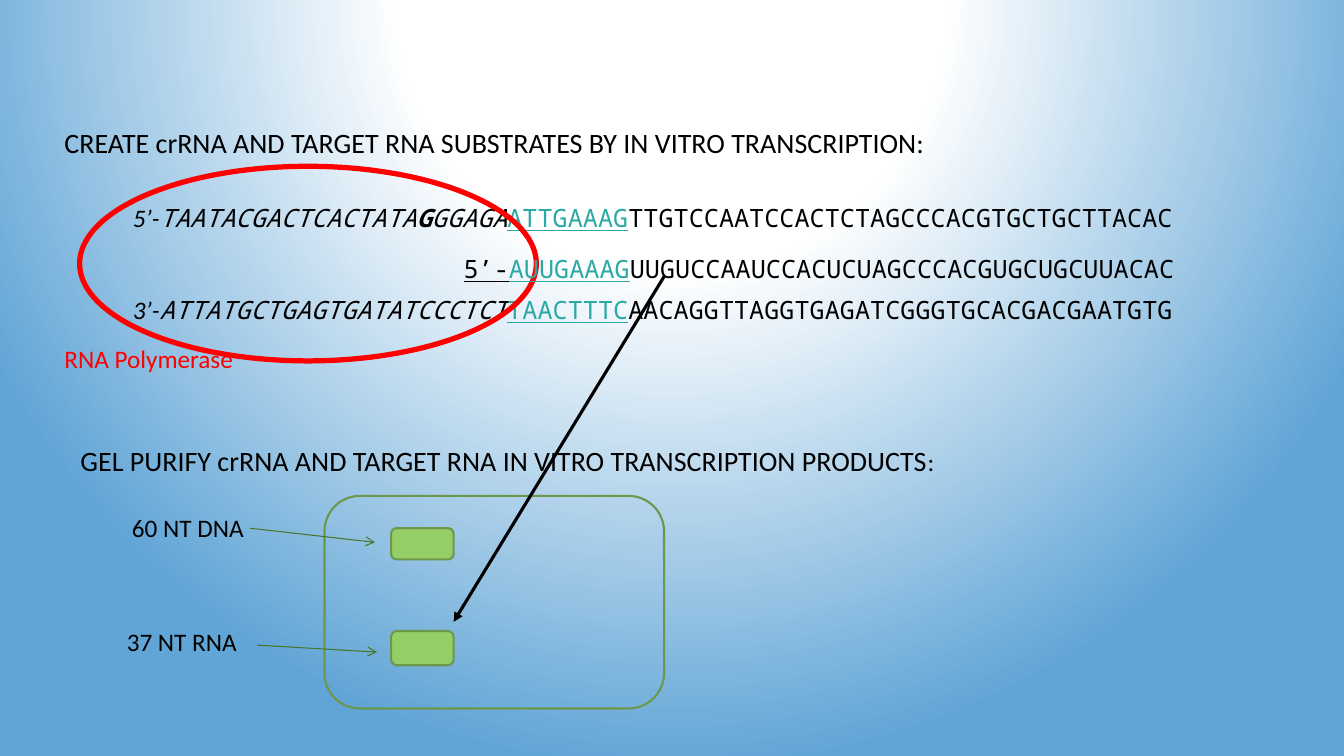
from dataclasses import dataclass

from lxml import etree
from pptx import Presentation
from pptx.dml.color import RGBColor
from pptx.enum import shapes, text
from pptx.oxml.ns import qn
from pptx.util import Pt


@dataclass(frozen=True)
class Theme:
    black: str = "000000"
    red: str = "FF0000"
    teal: str = "2BA9A5"
    band: str = "94CE67"
    gel: str = "6D984C"
    pointer: str = "487526"
    white: str = "FFFFFF"
    sky: str = "61A5D6"
    heading: int = 20
    body: int = 18
    sans: str = "Calibri"
    mono: str = "Noto Sans Mono"


THEME = Theme()
ITALIC = {"italic": True}
PREFIX = {"italic": True, "name": THEME.sans}
REPEAT = {"underline": True, "color": THEME.teal}


def style(font, color=None, size=None, **attributes):
    if color:
        font.color.rgb = RGBColor.from_string(color)
    if size:
        font.size = Pt(size)
    for name, value in attributes.items():
        setattr(font, name, value)


def add_background(slide):
    """Fill the slide with a radial gradient centred above its top edge."""
    slide.background.fill.gradient()
    gradient = slide.element.find(".//" + qn("a:gradFill"))
    for child in list(gradient):
        gradient.remove(child)
    stops = etree.SubElement(gradient, qn("a:gsLst"))
    for percent, color in ((0, THEME.white), (35, THEME.white), (100, THEME.sky)):
        stop = etree.SubElement(stops, qn("a:gs"), pos=str(percent * 1000))
        etree.SubElement(stop, qn("a:srgbClr"), val=color)
    circle = etree.SubElement(gradient, qn("a:path"), path="circle")
    etree.SubElement(circle, qn("a:fillToRect"), l="50000", t="-80000", r="50000", b="180000")


def add_text(slide, bounds, paragraphs, wrap=True, gap=0, **font):
    """Add paragraphs, each a list of (words, run style) pairs, gap points apart."""
    frame = slide.shapes.add_textbox(*map(Pt, bounds)).text_frame
    frame.word_wrap = wrap
    frame.auto_size = text.MSO_AUTO_SIZE.SHAPE_TO_FIT_TEXT
    defaults = {"name": THEME.sans, "size": THEME.body, "color": THEME.black}
    for index, runs in enumerate(paragraphs):
        paragraph = frame.add_paragraph() if index else frame.paragraphs[0]
        if index:
            paragraph.space_before = Pt(gap)
        style(paragraph.font, **{**defaults, **font})
        for words, run_style in runs:
            run = paragraph.add_run()
            run.text = words
            style(run.font, **run_style)


def add_outline(slide, kind, bounds, color, width, fill=None):
    shape = slide.shapes.add_shape(kind, *map(Pt, bounds))
    shape.shadow.inherit = False
    if fill:
        shape.fill.solid()
        shape.fill.fore_color.rgb = RGBColor.from_string(fill)
    else:
        shape.fill.background()
    shape.line.color.rgb = RGBColor.from_string(color)
    shape.line.width = Pt(width)


def add_arrow(slide, start, end, color, width, head):
    arrow = slide.shapes.add_connector(shapes.MSO_CONNECTOR.STRAIGHT, *map(Pt, start + end))
    arrow.line.color.rgb = RGBColor.from_string(color)
    arrow.line.width = Pt(width)
    etree.SubElement(arrow.line._get_or_add_ln(), qn("a:tailEnd"), type=head)
    etree.SubElement(arrow._element.spPr, qn("a:effectLst"))


def add_template(slide):
    """Show the DNA template strands, the polymerase and the RNA transcript."""
    sense = [
        ("5’-", PREFIX),
        ("TAATACGACTCACTATA", ITALIC),
        ("G", {"italic": True, "bold": True}),
        ("GGAGA", ITALIC),
        ("ATTGAAAG", REPEAT),
        ("TTGTCCAATCCACTCTAGCCCACGTGCTGCTTACAC", {}),
    ]
    antisense = [
        ("3’-", PREFIX),
        ("ATTATGCTGAGTGATATCCCTCT", ITALIC),
        ("TAACTTTC", REPEAT),
        ("AACAGGTTAGGTGAGATCGGGTGCACGACGAATGTG", {}),
    ]
    transcript = [
        ("5’-", {"underline": True}),
        ("AUUGAAAG", REPEAT),
        ("UUGUCCAAUCCACUCUAGCCCACGUGCUGCUUACAC", {}),
    ]
    add_text(slide, (87.8, 141.1, 773.3, 94.3), [sense, antisense], gap=44, name=THEME.mono)
    add_outline(slide, shapes.MSO_SHAPE.OVAL, (56.9, 118.8, 326.2, 139), THEME.red, 3.75)
    add_text(slide, (324, 177.1, 524.9, 51.1), [transcript], wrap=False, name=THEME.mono)


def add_gel(slide):
    rounded = shapes.MSO_SHAPE.ROUNDED_RECTANGLE
    add_outline(slide, rounded, (231.8, 354.2, 242.6, 151.9), THEME.gel, 1.5)
    for top, height in ((377.3, 22.3), (450.7, 24.5)):
        add_outline(slide, rounded, (279.4, top, 44.6, height), THEME.gel, 1.5, THEME.band)
    for start, end in (((178.6, 377.3), (267.8, 387.4)), ((183.6, 460.8), (269.3, 465.8))):
        add_arrow(slide, start, end, THEME.pointer, 0.75, "arrow")
    add_text(slide, (87.1, 362.2, 121.7, 28.8), [[("60 NT DNA", {})]])
    add_text(slide, (83.5, 444.2, 136.8, 28.8), [[("37 NT RNA", {})]])


def main():
    presentation = Presentation()
    presentation.slide_width, presentation.slide_height = Pt(960), Pt(540)
    slide = presentation.slides.add_slide(presentation.slide_layouts[6])
    add_background(slide)
    add_template(slide)
    add_gel(slide)
    create = [("CREATE crRNA AND TARGET RNA SUBSTRATES BY IN VITRO TRANSCRIPTION:", {})]
    purify = [
        ("GEL PURIFY crRNA AND TARGET RNA IN VITRO TRANSCRIPTION PRODUCTS", {}),
        (":", {"size": THEME.body}),
    ]
    add_text(slide, (38.9, 86.4, 634.3, 31.7), [create], wrap=False, size=THEME.heading)
    add_text(slide, (50.4, 313.2, 635.8, 31.7), [purify], wrap=False, size=THEME.heading)
    add_text(slide, (38.9, 241.9, 136.1, 28.8), [[("RNA Polymerase", {})]],
             wrap=False, color=THEME.red)
    add_arrow(slide, (474.5, 197.3), (324, 444.2), THEME.black, 2.25, "triangle")
    presentation.save("out.pptx")


if __name__ == "__main__":
    main()
